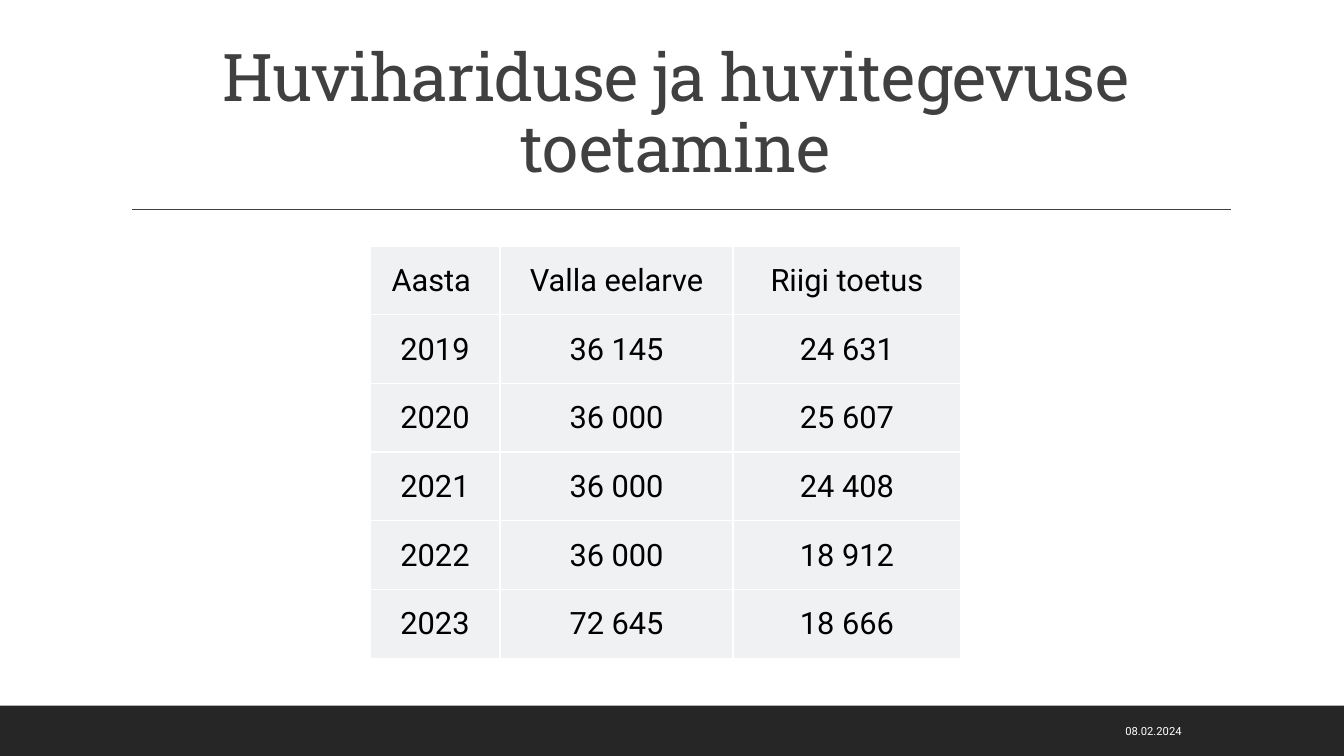
from lxml import etree
from pptx import Presentation
from pptx.dml.color import RGBColor
from pptx.enum.shapes import MSO_CONNECTOR, MSO_SHAPE
from pptx.enum.text import MSO_ANCHOR, MSO_AUTO_SIZE, PP_ALIGN
from pptx.oxml.ns import qn
from pptx.util import Inches, Pt

CENTER, RIGHT = PP_ALIGN.CENTER, PP_ALIGN.RIGHT
MIDDLE, BOTTOM = MSO_ANCHOR.MIDDLE, MSO_ANCHOR.BOTTOM
NO_AUTOFIT = MSO_AUTO_SIZE.NONE
RECTANGLE, STRAIGHT = MSO_SHAPE.RECTANGLE, MSO_CONNECTOR.STRAIGHT

# Content
TITLE = "Huvihariduse ja huvitegevuse toetamine"
DATE = "08.02.2024"
SUPPORT_ROWS = [
    ("Aasta ", "Valla eelarve", "Riigi toetus"),
    ("2019", "36 145", "24 631"),
    ("2020", "36 000", "25 607"),
    ("2021", "36 000", "24 408"),
    ("2022", "36 000", "18 912"),
    ("2023", "72 645", "18 666"),
]

# Format
COLORS = {"footer": "262626", "title": "404040", "cell": "EFF1F3",
          "table_text": "000000", "white": "FFFFFF"}
TITLE_FONT = {"name": "Roboto Slab", "size": Pt(47), "bold": False}
TABLE_FONT = {"name": "Roboto", "size": Pt(22), "bold": False}
DATE_FONT = {"name": "Roboto", "size": Pt(8)}
CELL_FORMAT = {"margin_left": Inches(0.01), "margin_right": Inches(0.01),
               "margin_top": Inches(0.01), "margin_bottom": 0,
               "vertical_anchor": MIDDLE}
COLUMN_WIDTHS = (1.29, 2.31, 2.26)
ROW_HEIGHT = 4.09 / len(SUPPORT_ROWS)
BORDER_SIDES = ("a:lnL", "a:lnR", "a:lnT", "a:lnB")


def color(name):
    return RGBColor.from_string(COLORS[name])


def apply(target, values):
    for attribute, value in values.items():
        setattr(target, attribute, value)


def write(frame, text, font, color_name, alignment):
    paragraph = frame.paragraphs[0]
    paragraph.alignment = alignment
    run = paragraph.add_run()
    run.text = text
    apply(run.font, font)
    run.font.color.rgb = color(color_name)
    return paragraph, run


def add_borders(cell):
    properties = cell._tc.get_or_add_tcPr()
    for position, side in enumerate(BORDER_SIDES):
        border = etree.Element(qn(side), w=str(Pt(1)))
        fill = etree.SubElement(border, qn("a:solidFill"))
        etree.SubElement(fill, qn("a:srgbClr"), val=COLORS["white"])
        properties.insert(position, border)


presentation = Presentation()
presentation.slide_width = Inches(13.33)
presentation.slide_height = Inches(7.5)
slide = presentation.slides.add_slide(presentation.slide_layouts[5])
shapes = slide.shapes

# Footer band
footer = shapes.add_shape(RECTANGLE, 0, Inches(7), Inches(13.33), Inches(0.5))
footer.shadow.inherit = False
footer.fill.solid()
footer.fill.fore_color.rgb = color("footer")
footer.line.fill.background()

# Rule under the title
rule = shapes.add_connector(STRAIGHT, Inches(1.31), Inches(2.08),
                            Inches(12.21), Inches(2.08))
rule.line.color.rgb = color("title")
rule.line.width = Pt(1)
etree.SubElement(rule._element.spPr, qn("a:effectLst"))

# Title
title = shapes.title
apply(title, {"left": Inches(1.2), "top": Inches(0.31),
              "width": Inches(11), "height": Inches(1.59)})
apply(title.text_frame, {"vertical_anchor": BOTTOM, "word_wrap": True,
                         "auto_size": NO_AUTOFIT})
heading, heading_run = write(title.text_frame, TITLE, TITLE_FONT, "title", CENTER)
heading.line_spacing = 0.9
heading_run.font._element.set("spc", "-50")

# Support table
support = shapes.add_table(
    len(SUPPORT_ROWS), len(COLUMN_WIDTHS), Inches(3.67), Inches(2.44),
    Inches(sum(COLUMN_WIDTHS)), Inches(ROW_HEIGHT * len(SUPPORT_ROWS))).table
for column, width in zip(support.columns, COLUMN_WIDTHS):
    column.width = Inches(width)
for row, values in zip(support.rows, SUPPORT_ROWS):
    row.height = Inches(ROW_HEIGHT)
    for cell, value in zip(row.cells, values):
        apply(cell, CELL_FORMAT)
        cell.fill.solid()
        cell.fill.fore_color.rgb = color("cell")
        add_borders(cell)
        write(cell.text_frame, value, TABLE_FONT, "table_text", CENTER)

# Date
date = shapes.add_textbox(Inches(8.99), Inches(7.05), Inches(2.83), Inches(0.4))
apply(date.text_frame, {"vertical_anchor": MIDDLE, "word_wrap": True})
write(date.text_frame, DATE, DATE_FONT, "white", RIGHT)

presentation.save("out.pptx")
